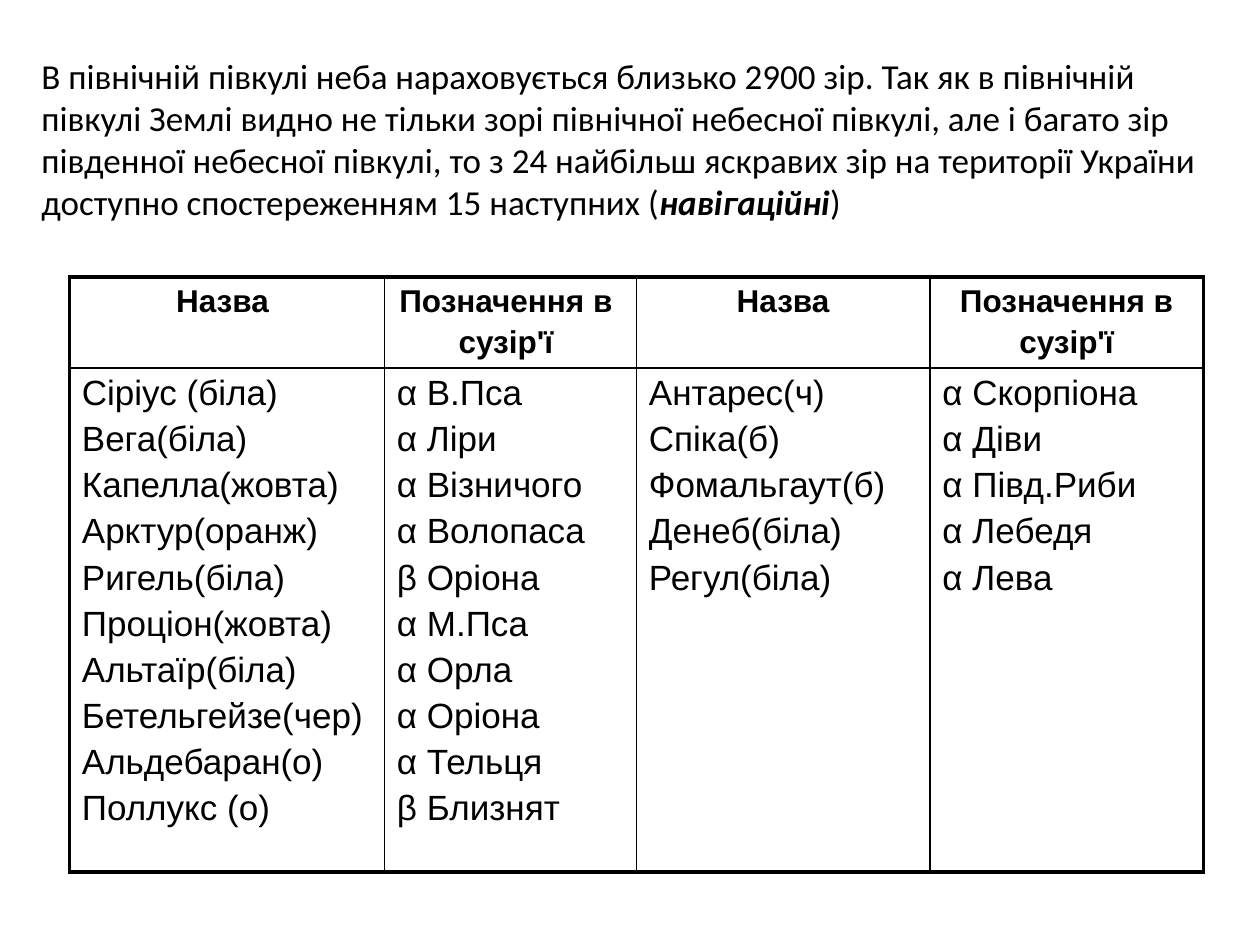
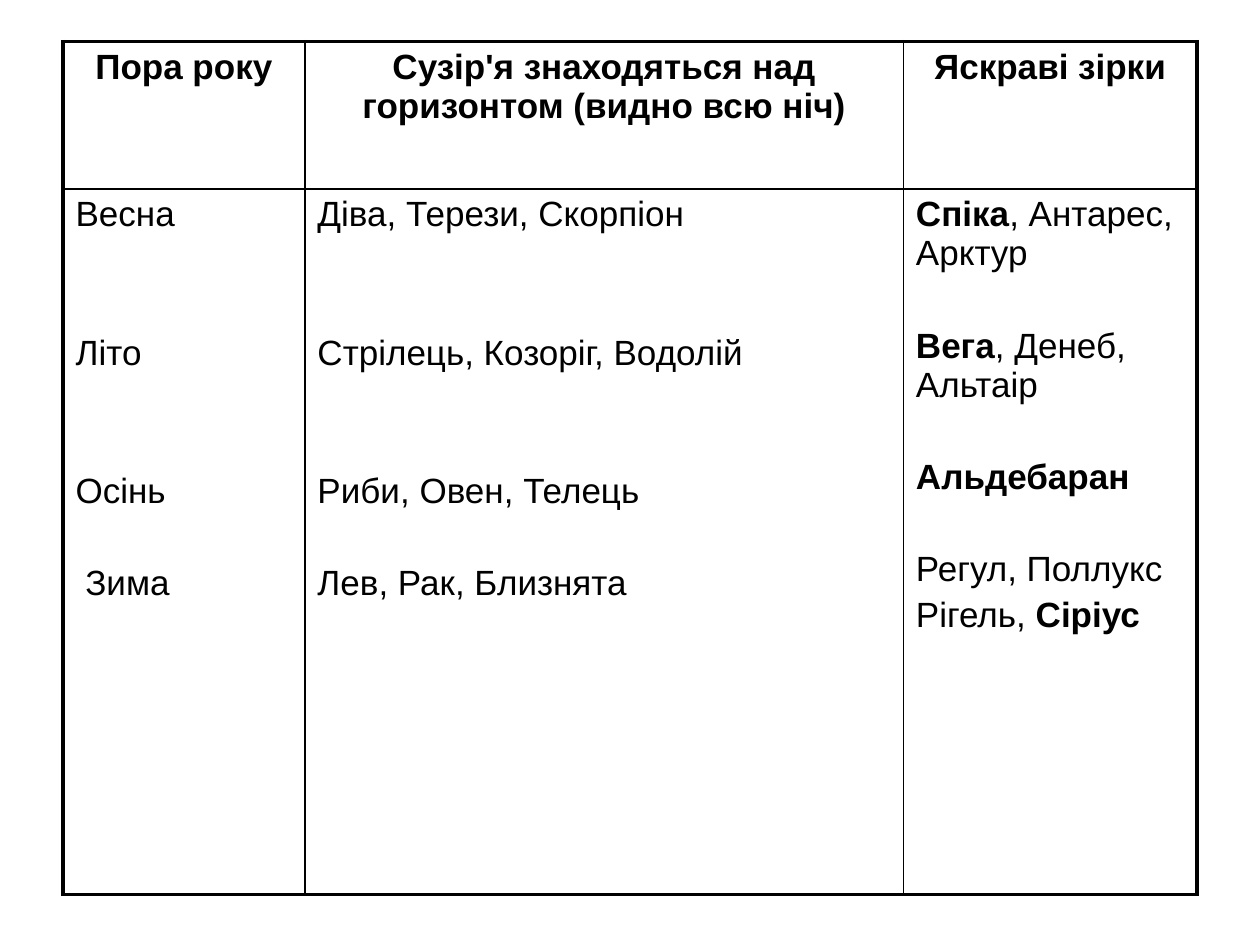
from lxml import etree
from pptx import Presentation
from pptx.dml.color import RGBColor
from pptx.enum.text import MSO_ANCHOR, PP_ALIGN
from pptx.oxml.ns import qn
from pptx.util import Inches, Pt

LEFT, CENTER = PP_ALIGN.LEFT, PP_ALIGN.CENTER
MIDDLE = MSO_ANCHOR.MIDDLE
BLACK = "000000"
THICK, THIN = Pt(2.25), Pt(1)
LINE_PITCH = 1.315  # one text line with its spacing, as a share of the font size


def rgb(color):
    return RGBColor.from_string(color)


def write(tf, paras, size=20, font="Arial", color=BLACK, align=LEFT,
          bold=False, accent_italic=False, gaps=()):
    """Fill a text frame; *text* is accented, gaps are lines skipped before a paragraph."""
    tf.word_wrap = True
    for i, text in enumerate(paras):
        p = tf.add_paragraph() if i else tf.paragraphs[0]
        p.alignment = align
        if i:
            skipped = gaps[i] if gaps else 0
            p.space_before = Pt(round(size * (0.2 + LINE_PITCH * skipped), 1))
        for j, part in enumerate(text.split("*")):
            if part:
                accent = j % 2 == 1
                r = p.add_run()
                r.text = part
                r.font.size = Pt(size)
                r.font.name = font
                r.font.color.rgb = rgb(color)
                r.font.bold = bold or accent
                r.font.italic = accent and accent_italic


# Content of the two tables
star_heads = [["Назва "], ["Позначення в ", "сузір'ї "],
              ["Назва"], ["Позначення в", " сузір'ї "]]
star_columns = [
    ["Сіріус (біла)", "Вега(біла)", "Капелла(жовта)", "Арктур(оранж)",
     "Ригель(біла)", "Проціон(жовта)", "Альтаїр(біла)", "Бетельгейзе(чер)",
     "Альдебаран(о)", "Поллукс (о)"],
    ["α В.Пса", "α Ліри", "α Візничого", "α Волопаса", "β Оріона",
     "α М.Пса", "α Орла", "α Оріона", "α Тельця", "β Близнят"],
    ["Антарес(ч)", "Спіка(б)", "Фомальгаут(б)", "Денеб(біла)", "Регул(біла)"],
    ["α Скорпіона", "α Діви", "α Півд.Риби", "α Лебедя", "α Лева"],
]
season_heads = [["Пора року"],
                ["Сузір'я знаходяться над горизонтом (видно всю ніч)"],
                ["Яскраві зірки"]]
season_columns = [
    ["Весна", "Літо", "Осінь", " Зима"],
    ["Діва, Терези, Скорпіон", "Стрілець, Козоріг, Водолій",
     "Риби, Овен, Телець", "Лев, Рак, Близнята"],
    ["*Спіка*, Антарес, Арктур", "*Вега*, Денеб, Альтаір", "*Альдебаран*",
     "Регул, Поллукс", "Рігель, *Сіріус*"],
]
season_gaps = [(0, 2, 2, 1), (0, 2, 2, 1), (0, 1, 1, 1, 0)]

# left, top, column widths, row heights, header size, headers, columns, gaps
tables = [
    (0.55, 2.2, (2.5, 2, 2.33, 2.17), (0.72, 4), 18,
     star_heads, star_columns, [()] * 4),
    (0.5, 0.33, (1.92, 4.75, 2.33), (1.17, 5.6), 20,
     season_heads, season_columns, season_gaps),
]

prs = Presentation()
prs.slide_width, prs.slide_height = Inches(10), Inches(7.5)

# One slide per table
for left, top, widths, heights, head_size, heads, columns, gaps in tables:
    s = prs.slides.add_slide(prs.slide_layouts[6])
    table = s.shapes.add_table(
        len(heights), len(widths), Inches(left), Inches(top),
        Inches(sum(widths)), Inches(sum(heights))).table
    table.first_row = table.horz_banding = False
    for row, height in zip(table.rows, heights):
        row.height = Inches(height)

    for c, width in enumerate(widths):
        table.columns[c].width = Inches(width)
        write(table.cell(0, c).text_frame, heads[c], size=head_size,
              align=CENTER, bold=True)
        write(table.cell(1, c).text_frame, columns[c], gaps=gaps[c])

        # Thick outer frame, thin inner lines
        for r in range(len(heights)):
            cell = table.cell(r, c)
            cell.fill.background()
            tc_pr = cell._tc.get_or_add_tcPr()
            outer = {"lnL": c == 0, "lnR": c == len(widths) - 1,
                     "lnT": r == 0, "lnB": r == len(heights) - 1}
            for i, (side, is_outer) in enumerate(outer.items()):
                ln = etree.Element(qn(f"a:{side}"), w=str(THICK if is_outer else THIN))
                fill = etree.SubElement(ln, qn("a:solidFill"))
                etree.SubElement(fill, qn("a:srgbClr"), val=BLACK)
                tc_pr.insert(i, ln)

# Introduction above the star table
intro = prs.slides[0].shapes.add_textbox(
    Inches(0.23), Inches(0.16), Inches(9.53), Inches(1.88))
intro.text_frame.vertical_anchor = MIDDLE
write(intro.text_frame, [
    "В північній півкулі неба нараховується близько 2900 зір. Так як в північній "
    "півкулі Землі видно не тільки зорі північної небесної півкулі, але і багато зір "
    "південної небесної півкулі, то з 24 найбільш яскравих зір на території України "
    "доступно спостереженням 15 наступних (*навігаційні*)"],
    font="Calibri", accent_italic=True)

prs.save("out.pptx")
